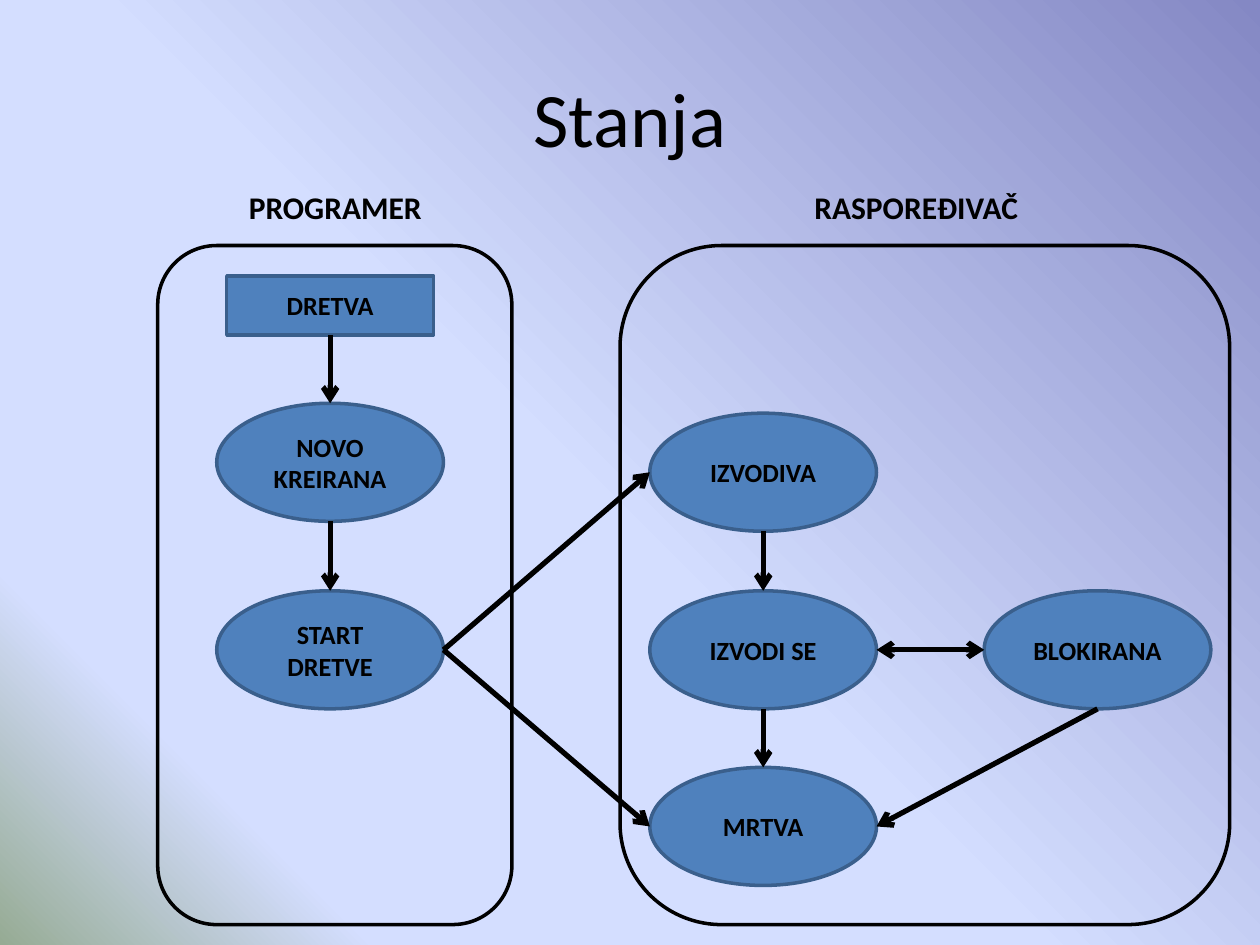
from pptx import Presentation
from pptx.dml.color import RGBColor
from pptx.enum.shapes import MSO_CONNECTOR, MSO_SHAPE
from pptx.enum.text import MSO_ANCHOR, PP_ALIGN
from pptx.oxml.ns import qn
from pptx.util import Cm, Pt
from lxml.etree import SubElement

BLACK = "000000"
STATE_WIDTH, STATE_HEIGHT = 4.57, 2.38
LEFT_COLUMN, MIDDLE_COLUMN, RIGHT_COLUMN = 4.37, 13.1, 19.84
RUN_ROW = 11.91
LABEL_TOP, LABEL_WIDTH, LABEL_HEIGHT = 3.58, 4.78, 1.19
FRAME_TOP, FRAME_HEIGHT = 4.95, 13.69


def color(value):
    """Turn a hex string into a colour."""
    return RGBColor.from_string(value)


def set_background(slide, stops, angle):
    """Fill the slide background with a linear gradient."""
    slide.background.fill.gradient()
    gradient = slide.element.find(".//" + qn("a:gradFill"))
    stop_list = gradient.find(qn("a:gsLst"))
    for stop in list(stop_list):
        stop_list.remove(stop)
    for position, value in stops:
        stop = SubElement(stop_list, qn("a:gs"), pos=str(position * 1000))
        SubElement(stop, qn("a:srgbClr"), val=value)
    gradient.find(qn("a:lin")).set("ang", str(angle * 60000))


def set_text(shape, text, size, bold=True):
    """Write centred black text into a shape."""
    frame = shape.text_frame
    frame.word_wrap = True
    frame.vertical_anchor = MSO_ANCHOR.MIDDLE
    frame.text = text
    paragraph = frame.paragraphs[0]
    paragraph.alignment = PP_ALIGN.CENTER
    font = paragraph.font
    font.name, font.size, font.bold = "Calibri", Pt(size), bold
    font.color.rgb = color(BLACK)


def add_title(slide, text):
    """Place and format the title placeholder."""
    title = slide.shapes.title
    title.left, title.top = Cm(1.27), Cm(0.76)
    title.width, title.height = Cm(22.86), Cm(3.18)
    set_text(title, text, 44, bold=False)


def add_label(slide, text, left):
    """Add the heading above a frame."""
    label = slide.shapes.add_textbox(
        Cm(left), Cm(LABEL_TOP), Cm(LABEL_WIDTH), Cm(LABEL_HEIGHT))
    set_text(label, text, 18)


def add_outlined(slide, kind, box, line):
    """Add a preset shape with a 2 pt outline."""
    shape = slide.shapes.add_shape(kind, *map(Cm, box))
    shape.shadow.inherit = False
    shape.line.color.rgb = color(line)
    shape.line.width = Pt(2)
    return shape


def add_node(slide, kind, text, box):
    """Add a blue node with its name."""
    node = add_outlined(slide, kind, box, "3A5F8C")
    node.fill.solid()
    node.fill.fore_color.rgb = color("4F81BD")
    set_text(node, text, 15)
    return node


def add_state(slide, text, left, top):
    """Add an elliptical thread state."""
    return add_node(slide, MSO_SHAPE.OVAL, text,
                    (left, top, STATE_WIDTH, STATE_HEIGHT))


def add_frame(slide, left, width):
    """Add an unfilled rounded frame around a group of states."""
    box = (left, FRAME_TOP, width, FRAME_HEIGHT)
    add_outlined(slide, MSO_SHAPE.ROUNDED_RECTANGLE, box, BLACK).fill.background()


def side_point(shape, side):
    """Return the middle point of one side of a shape."""
    across, down = {"top": (1, 0), "bottom": (1, 2),
                    "left": (0, 1), "right": (2, 1)}[side]
    return (shape.left + shape.width * across // 2,
            shape.top + shape.height * down // 2)


def add_arrow(slide, start, start_side, end, end_side, both_ways=False):
    """Draw an arrow between the sides of two nodes."""
    arrow = slide.shapes.add_connector(
        MSO_CONNECTOR.STRAIGHT,
        *side_point(start, start_side), *side_point(end, end_side))
    arrow.line.color.rgb = color(BLACK)
    arrow.line.width = Pt(3)
    line = arrow.line._get_or_add_ln()
    if both_ways:
        SubElement(line, qn("a:headEnd"), type="arrow")
    SubElement(line, qn("a:tailEnd"), type="arrow")
    SubElement(arrow.element.spPr, qn("a:effectLst"))


def main():
    """Build the thread state slide."""
    presentation = Presentation()
    presentation.slide_width, presentation.slide_height = Cm(25.4), Cm(19.05)
    slide = presentation.slides.add_slide(presentation.slide_layouts[5])
    set_background(slide, [(0, "8488C4"), (53, "D4DEFF"),
                           (83, "D4DEFF"), (100, "96AB94")], 135)
    add_title(slide, "Stanja")

    thread = add_node(slide, MSO_SHAPE.RECTANGLE, "DRETVA",
                      (4.57, 5.56, 4.17, 1.19))
    created = add_state(slide, "NOVO KREIRANA", LEFT_COLUMN, 8.13)
    started = add_state(slide, "START DRETVE", LEFT_COLUMN, RUN_ROW)
    add_label(slide, "PROGRAMER", LEFT_COLUMN)
    add_label(slide, "RASPOREĐIVAČ", 16.08)
    running = add_state(slide, "IZVODI SE", MIDDLE_COLUMN, RUN_ROW)
    dead = add_state(slide, "MRTVA", MIDDLE_COLUMN, 15.47)
    runnable = add_state(slide, "IZVODIVA", MIDDLE_COLUMN, 8.33)
    blocked = add_state(slide, "BLOKIRANA", RIGHT_COLUMN, RUN_ROW)

    for upper, lower in ((thread, created), (created, started),
                         (runnable, running), (running, dead)):
        add_arrow(slide, upper, "bottom", lower, "top")
    for target in (runnable, dead):
        add_arrow(slide, started, "right", target, "left")
    add_arrow(slide, blocked, "bottom", dead, "right")
    add_arrow(slide, blocked, "left", running, "right", both_ways=True)

    add_frame(slide, 3.18, 7.14)
    add_frame(slide, 12.5, 12.29)
    presentation.save("out.pptx")


if __name__ == "__main__":
    main()
